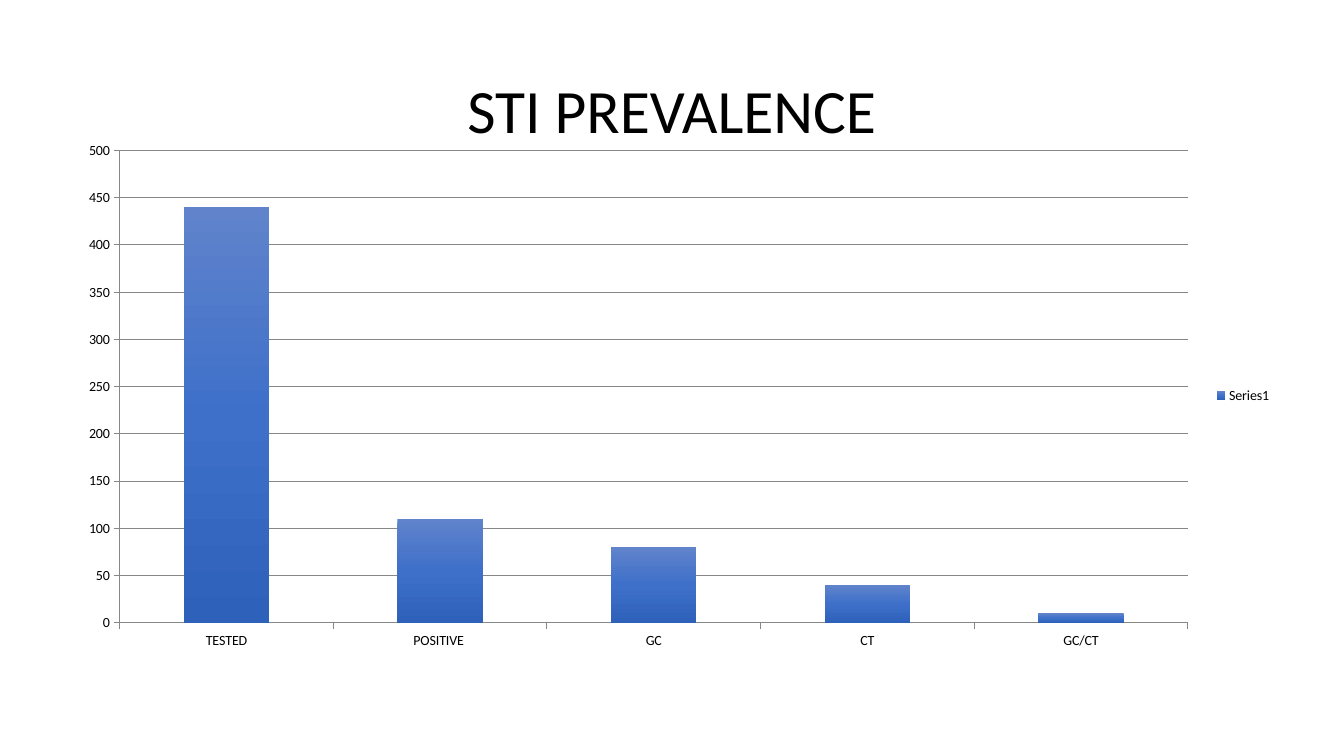
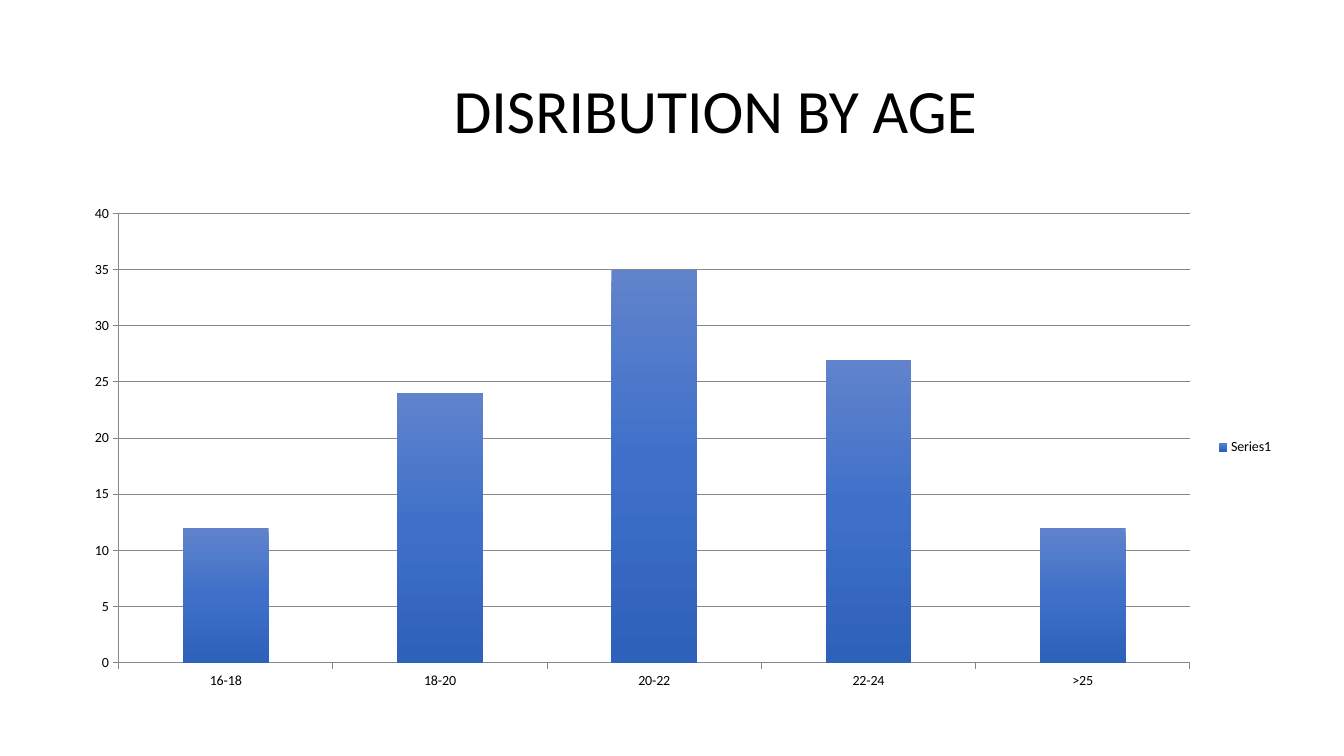
"""Build two chart slides on STI prevalence and its distribution by age."""
from dataclasses import dataclass

from lxml import etree
from pptx import Presentation
from pptx import util as u
from pptx.chart import data as chart_data
from pptx.dml import color
from pptx.enum import chart as kinds, text
from pptx.oxml import ns


@dataclass(frozen=True)
class Theme:
    font: str = "Calibri"
    ink: str = "000000"
    line: str = "878787"
    bar_stops: tuple = ((0, "6083CB"), (50, "3E70CA"), (100, "2E61BA"))
    title_size: int = 44
    chart_size: int = 10
    title_frame: tuple = (2.33, 1.01, 29.21, 3.68)


THEME = Theme()
SLIDES = [
    {
        "title": "STI PREVALENCE",
        "indent": 0,
        "kind": kinds.XL_CHART_TYPE.COLUMN_CLUSTERED,
        "frame": (1.63, 3.33, 30.68, 13.28),
        "values": {"TESTED": 440, "POSITIVE ": 110, "GC": 80, "CT": 40, "GC/CT": 10},
    },
    {
        "title": "DISRIBUTION BY AGE",
        "indent": 2.2,
        "kind": kinds.XL_CHART_TYPE.COLUMN_STACKED,
        "frame": (1.78, 4.93, 30.58, 12.67),
        "values": {"16-18": 12, "18-20": 24, "20-22": 35, "22-24": 27, ">25": 12},
    },
]


def rgb(value):
    return color.RGBColor.from_string(value)


def set_font(font, size):
    font.name = THEME.font
    font.size = u.Pt(size)
    font.color.rgb = rgb(THEME.ink)


def add_title(page, title, indent):
    box = page.shapes.add_textbox(*map(u.Cm, THEME.title_frame))
    frame = box.text_frame
    frame.word_wrap = True
    frame.vertical_anchor = text.MSO_ANCHOR.MIDDLE
    frame.margin_left = u.Cm(0.25 + indent)
    frame.text = title
    para = frame.paragraphs[0]
    para.alignment = text.PP_ALIGN.CENTER
    para.line_spacing = 0.9
    set_font(para.runs[0].font, THEME.title_size)


def shade_bars(series):
    fill = series.format.fill
    fill.gradient()
    fill.gradient_angle = 270
    stops = series.format.fill.gradient_stops
    stop_list = next(series.format.element.iter(ns.qn("a:gsLst"))) if hasattr(
        series.format, "element") else next(series._element.iter(ns.qn("a:gsLst")))
    for stop in list(stop_list):
        stop_list.remove(stop)
    for position, value in THEME.bar_stops:
        stop = etree.SubElement(stop_list, ns.qn("a:gs"), pos=str(position * 1000))
        etree.SubElement(stop, ns.qn("a:srgbClr"), val=value)


def style_line(line):
    line.color.rgb = rgb(THEME.line)
    line.width = u.Pt(0.75)


def add_column_chart(page, kind, frame, values):
    data = chart_data.CategoryChartData()
    data.categories = list(values)
    data.add_series("Series1", list(values.values()))
    chart = page.shapes.add_chart(kind, *map(u.Cm, frame), data).chart
    set_font(chart.font, THEME.chart_size)
    chart.has_title = False
    chart.has_legend = True
    chart.legend.position = kinds.XL_LEGEND_POSITION.RIGHT
    chart.legend.include_in_layout = False
    for axis in (chart.category_axis, chart.value_axis):
        axis.major_tick_mark = kinds.XL_TICK_MARK.OUTSIDE
        axis.minor_tick_mark = kinds.XL_TICK_MARK.NONE
        style_line(axis.format.line)
    chart.value_axis.has_major_gridlines = True
    style_line(chart.value_axis.major_gridlines.format.line)
    plot = chart.plots[0]
    plot.gap_width = 150
    plot.vary_by_categories = False
    shade_bars(plot.series[0])


def main():
    deck = Presentation()
    deck.slide_width, deck.slide_height = u.Cm(33.87), u.Cm(19.05)
    for content in SLIDES:
        page = deck.slides.add_slide(deck.slide_layouts[6])
        add_title(page, content["title"], content["indent"])
        add_column_chart(page, content["kind"], content["frame"], content["values"])
    deck.save("out.pptx")


if __name__ == "__main__":
    main()
